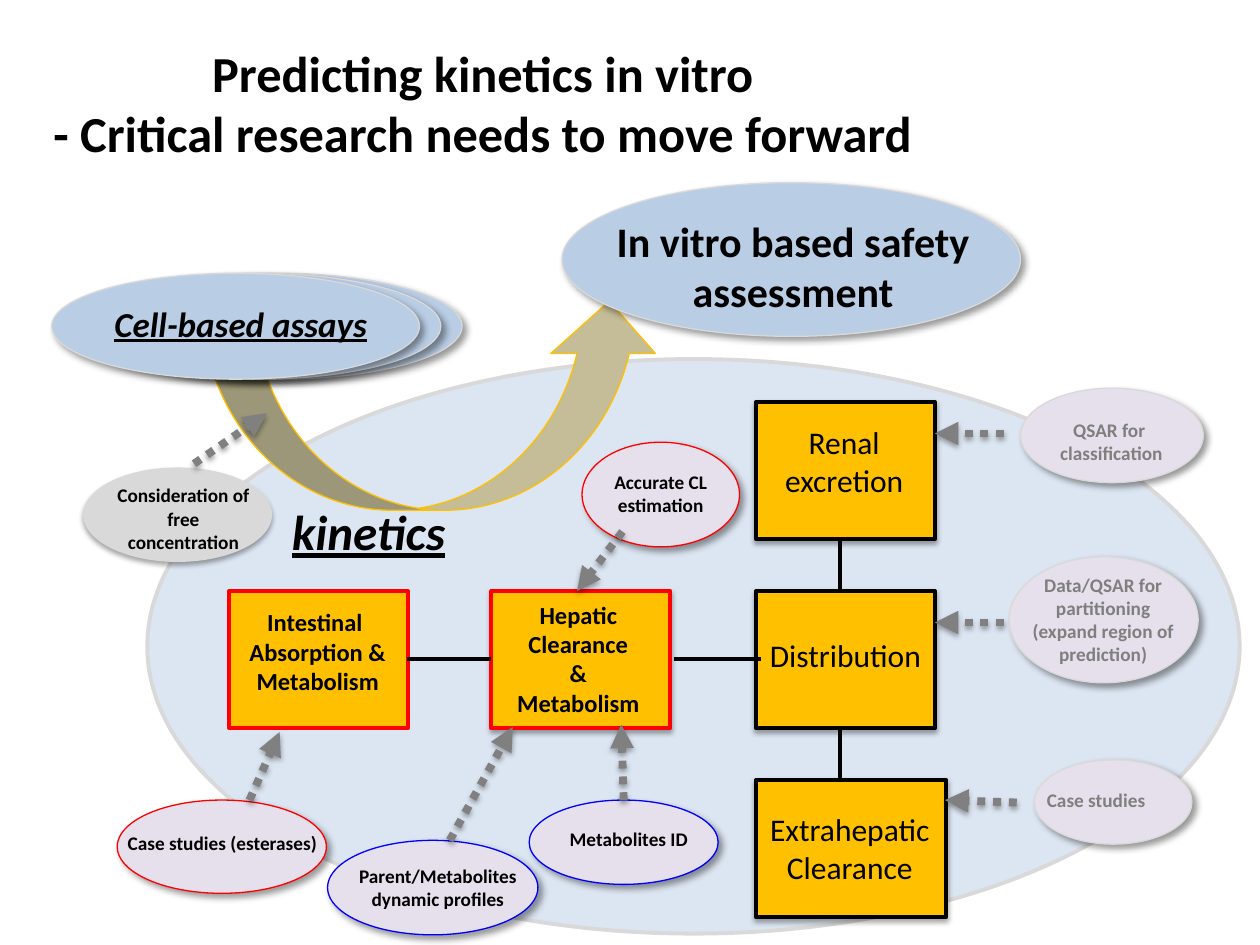
from lxml.etree import SubElement
from pptx import Presentation
from pptx.dml.color import RGBColor
from pptx.enum.dml import MSO_LINE
from pptx.enum.shapes import MSO_CONNECTOR, MSO_SHAPE
from pptx.enum.text import MSO_ANCHOR, PP_ALIGN
from pptx.oxml.ns import qn
from pptx.util import Pt

COLORS = {
    "black": "000000", "red": "FF0000", "blue": "0000FF", "amber": "FFC000",
    "sky": "B9CDE5", "pale": "DCE6F2", "lilac": "E6E0EC", "silver": "D9D9D9",
    "gray": "808080", "muted": "7F7F7F", "khaki": "C4BD97",
}
DEEP = dict(alpha=40, blur=4, distance=3, angle=45)
SOFT = dict(alpha=35, blur=3.1, distance=1.8, angle=90)

COMPARTMENTS = [
    (0, 1, 102.2, "red", None, "Intestinal \nAbsorption &\nMetabolism",
     (-6.4, 5.7, 113.8, 58.3), dict(size=14, bold=True)),
    (1, 1, 102.2, "red", SOFT, "Hepatic Clearance\n&\nMetabolism",
     (-4.3, 1.4, 108, 74.9), dict(size=14, bold=True)),
    (2, 0, 102.2, "black", SOFT, "Renal excretion",
     (-3.6, 8.6, 108, 67.7), dict(size=18)),
    (2, 1, 102.2, "black", SOFT, "Distribution",
     (0, 22.3, 102.2, 28.8), dict(size=18)),
    (2, 2, 108.7, "black", SOFT, "Extrahepatic Clearance",
     (-5.8, 13.7, 118.8, 51.1), dict(size=18)),
]
LINKS = [
    (101.6, 146.9, 149.8, 146.9), (254.2, 146.9, 303.9, 146.9),
    (349.2, 77.7, 349.2, 108), (349.2, 185.7, 349.2, 216),
]
FADED = dict(color="muted")
NEEDS = [
    ((67, 457.2, 119.5, 53.3), "Case studies (esterases)", (-2.9, 14.4, 126, 20.9),
     (75.6, 0, 92.8, -38.9), dict(line="red"), {}),
    ((187.2, 480.2, 120.2, 54), "Parent/Metabolites dynamic profiles",
     (0, 10.1, 126, 33.8), (69.8, 0, 105.8, -64.8), dict(line="blue"), {}),
    ((302.4, 457.2, 108, 48.2), "Metabolites ID", (0, 12.2, 113.8, 20.9),
     (54, 0, 52.6, -43.2), dict(line="blue"), {}),
    ((332.6, 252.7, 90, 59.8), "Accurate CL estimation", (2.9, 12.3, 84.2, 33.8),
     (23.1, 51.1, -2.8, 85), dict(line="red"), {}),
    ((583.2, 221.8, 104.4, 54), "QSAR for \nclassification", (-5, 13.6, 113.8, 34.6),
     (-9.4, 25.9, -49, 25.9), {}, FADED),
    ((576.7, 318.2, 108, 72), "Data/QSAR for partitioning\n(expand region of prediction)",
     (5.8, 5.8, 95.8, 61.9), (-2.9, 37.5, -42.5, 37.5), {}, FADED),
    ((591.1, 434.2, 90, 48.2), "Case studies", (0, 12.9, 95.8, 20.9),
     (-10.1, 24.4, -51.1, 23), {}, dict(color="muted", align=PP_ALIGN.LEFT)),
    ((47.5, 267.1, 108, 54), "Consideration of free concentration",
     (12.3, 5.8, 90, 47.5), (63.4, -2.1, 105.1, -30.9),
     dict(fill="silver", line=None, shadow=SOFT), {}),
]


def rgb(name):
    """Return the named colour."""
    return RGBColor.from_string(COLORS[name])


def inside(box, offset):
    """Return an offset box moved to the origin of its region."""
    return (box[0] + offset[0], box[1] + offset[1], *offset[2:])


def set_shadow(shape, shadow):
    """Give a shape or connector the stated shadow, or none."""
    effects = SubElement(shape._element.spPr, qn("a:effectLst"))
    if shadow:
        outer = SubElement(
            effects, qn("a:outerShdw"), blurRad=str(int(Pt(shadow["blur"]))),
            dist=str(int(Pt(shadow["distance"]))), dir=str(shadow["angle"] * 60000),
            algn="tl", rotWithShape="0")
        color = SubElement(outer, qn("a:srgbClr"), val=COLORS["black"])
        SubElement(color, qn("a:alpha"), val=str(shadow["alpha"] * 1000))


def add_shape(page, kind, box, fill, line=None, weight=0.75, shadow=None):
    """Add a filled preset shape."""
    shape = page.shapes.add_shape(kind, *map(Pt, box))
    shape.fill.solid()
    shape.fill.fore_color.rgb = rgb(fill)
    if line:
        shape.line.color.rgb = rgb(line)
        shape.line.width = Pt(weight)
    else:
        shape.line.fill.background()
    set_shadow(shape, shadow)


def add_line(page, ends, color="black", weight=2.25, arrow=False):
    """Add a plain line, or a dotted arrow with a shadow."""
    line = page.shapes.add_connector(MSO_CONNECTOR.STRAIGHT, *map(Pt, ends))
    line.line.color.rgb = rgb(color)
    line.line.width = Pt(weight)
    if arrow:
        line.line.dash_style = MSO_LINE.ROUND_DOT
        SubElement(line.line._ln, qn("a:tailEnd"), type="triangle")
    set_shadow(line, SOFT if arrow else None)


def write(frame, text, size=11, color="black", bold=False, italic=None,
          underline=None, align=PP_ALIGN.CENTER, wrap=True):
    """Fill a text frame with formatted paragraphs."""
    frame.text = text
    frame.word_wrap = wrap
    frame.vertical_anchor = MSO_ANCHOR.TOP
    for para in frame.paragraphs:
        para.alignment = align
        for span in para.runs:
            font = span.font
            font.name, font.size, font.bold = "Calibri", Pt(size), bold
            font.italic, font.underline = italic, underline
            font.color.rgb = rgb(color)


def add_text(page, box, text, **style):
    """Add a text box."""
    write(page.shapes.add_textbox(*map(Pt, box)).text_frame, text, **style)


def place_title(page, box):
    """Place the two-line slide title."""
    title = page.shapes.title
    title.left, title.top, title.width, title.height = map(Pt, box)
    frame = title.text_frame
    frame.margin_left = frame.margin_right = frame.margin_top = frame.margin_bottom = 0
    write(frame, "Predicting kinetics in vitro\v- Critical research needs to move forward",
          size=28.8, bold=True)


def place_kinetics(page, box):
    """Place the large kinetics field with its curved arrow and heading."""
    add_shape(page, MSO_SHAPE.OVAL, box, "pale", "silver", 2.25)
    add_shape(page, MSO_SHAPE.CURVED_UP_ARROW, inside(box, (31, -33.1, 262.8, 119.5)),
              "khaki", "amber")
    add_text(page, inside(box, (75.6, 77.8, 103, 41)), "kinetics", size=28, bold=True,
             italic=True, underline=True, align=PP_ALIGN.LEFT, wrap=False)


def place_assays(page, box):
    """Place the stack of cell-based assays."""
    for step in (2, 1, 0):
        add_shape(page, MSO_SHAPE.OVAL, inside(box, (12.2 * step, 0, 210.2, box[3])),
                  "sky", "silver", shadow=DEEP)
    add_text(page, inside(box, (28.8, 13, 159.8, 31.7)), "Cell-based assays", size=20,
             bold=True, italic=True, underline=True, align=PP_ALIGN.LEFT, wrap=False)


def place_compartments(page, box):
    """Place the linked body compartments on a grid."""
    columns, pitch = (0, 149.8, 301), 108
    for column, row, width, line, shadow, text, offset, style in COMPARTMENTS:
        cell = inside(box, (columns[column], row * pitch, width, 78.5))
        add_shape(page, MSO_SHAPE.RECTANGLE, cell, "amber", line, 2.25, shadow)
        add_text(page, inside(cell, offset), text, **style)
    for x1, y1, x2, y2 in LINKS:
        add_line(page, inside(box, (x1, y1)) + inside(box, (x2, y2)))


def place_need(page, box, text, offset, ends, look, style):
    """Place one research need with the arrow to its target."""
    add_shape(page, MSO_SHAPE.OVAL, box,
              **{"fill": "lilac", "line": "silver", "shadow": DEEP, **look})
    add_line(page, inside(box, ends[:2]) + inside(box, ends[2:]), "gray", 4.5, arrow=True)
    add_text(page, inside(box, offset), text, bold=True, **style)


def place_assessment(page, box):
    """Place the safety assessment goal."""
    add_shape(page, MSO_SHAPE.OVAL, box, "sky", "silver", shadow=DEEP)
    add_text(page, inside(box, (-17.3, 15.1, 298.8, 65.5)),
             "In vitro based safety assessment", size=24, bold=True)


def main():
    """Build and save the deck."""
    deck = Presentation()
    deck.slide_width, deck.slide_height = Pt(720), Pt(540)
    page = deck.slides.add_slide(deck.slide_layouts[5])
    place_title(page, (24, 24, 504, 90))
    place_kinetics(page, (84.2, 205.2, 624.2, 328.3))
    place_assays(page, (29.5, 156.2, 234.6, 60.5))
    place_compartments(page, (131, 229.7, 409.7, 294.5))
    for need in NEEDS:
        place_need(page, *need)
    place_assessment(page, (321.1, 104.4, 262.1, 87.8))
    deck.save("out.pptx")


if __name__ == "__main__":
    main()
